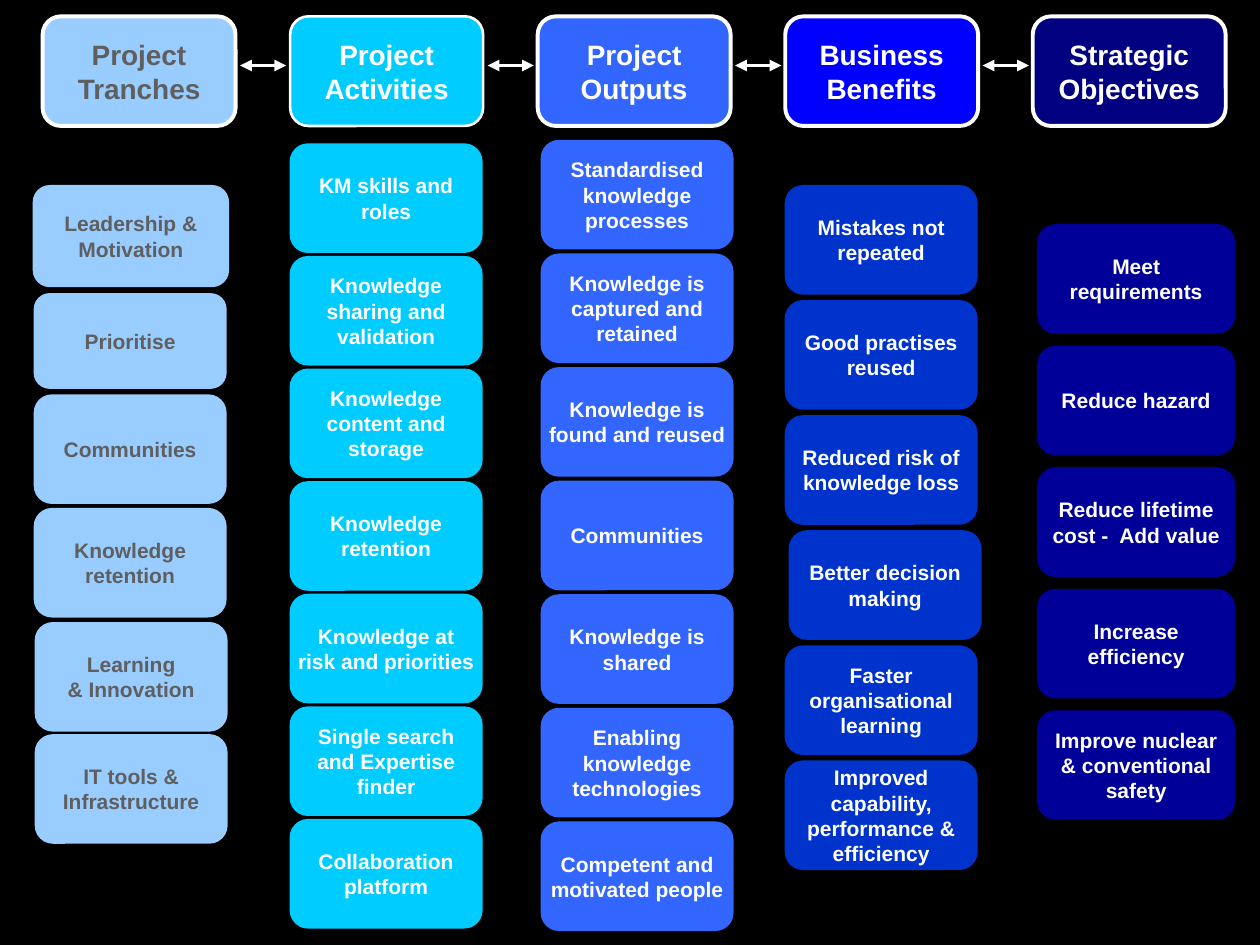
from lxml.etree import SubElement
from pptx import Presentation
from pptx.dml.color import RGBColor
from pptx.enum.shapes import MSO_CONNECTOR, MSO_SHAPE
from pptx.enum.text import MSO_ANCHOR, PP_ALIGN
from pptx.oxml.ns import qn
from pptx.util import Cm, Pt

HUES = {
    "black": "000000", "white": "FFFFFF", "grey": "5F5F5F",
    "pale": "99CCFF", "cyan": "00CCFF", "sky": "3366FF",
    "blue": "0000FF", "royal": "0033CC", "navy": "000080", "deep": "000099",
}
WIDE, HIGH = 3.89, 2.21
STEP = 4.99


def hue(name):
    return RGBColor.from_string(HUES[name])


def add_box(left, top, wide, high, fill, text, ink, size):
    box = slide.shapes.add_shape(
        MSO_SHAPE.ROUNDED_RECTANGLE, Cm(left), Cm(top), Cm(wide), Cm(high))
    box.shadow.inherit = False
    box.fill.solid()
    box.fill.fore_color.rgb = hue(fill)
    box.line.fill.background()
    frame = box.text_frame
    frame.text = text
    margins = {"margin_left": 0.05, "margin_right": 0.05,
               "margin_top": 0.03, "margin_bottom": 0.03}
    for name, gap in margins.items():
        setattr(frame, name, Cm(gap))
    frame.word_wrap = True
    frame.vertical_anchor = MSO_ANCHOR.MIDDLE
    style = {"name": "Arial", "size": Pt(size), "bold": True}
    for para in frame.paragraphs:
        para.alignment = PP_ALIGN.CENTER
        for name, value in style.items():
            setattr(para.font, name, value)
        para.font.color.rgb = hue(ink)
    return box


deck = Presentation()
deck.slide_width, deck.slide_height = Cm(25.4), Cm(19.05)
slide = deck.slides.add_slide(deck.slide_layouts[6])

ground = slide.shapes.add_shape(
    MSO_SHAPE.RECTANGLE, 0, 0, deck.slide_width, deck.slide_height)
ground.shadow.inherit = False
ground.fill.solid()
ground.fill.fore_color.rgb = hue("black")
ground.line.fill.background()

# Heading row: text, fill, ink, outline width
heads = [
    ("Project\nTranches", "pale", "grey", 2.25),
    ("Project\nActivities", "cyan", "white", 1.5),
    ("Project\nOutputs", "sky", "white", 2.25),
    ("Business\nBenefits", "blue", "white", 2.25),
    ("Strategic\nObjectives", "navy", "white", 2.25),
]
for col, (text, fill, ink, width) in enumerate(heads):
    head = add_box(0.86 + col * STEP, 0.33, WIDE, HIGH, fill, text, ink, 16)
    head.text_frame.word_wrap = False
    head.line.color.rgb = hue("white")
    head.line.width = Pt(width)

# Double arrows between the headings
for col in range(len(heads) - 1):
    start = 4.84 + col * STEP
    arrow = slide.shapes.add_connector(
        MSO_CONNECTOR.STRAIGHT, Cm(start), Cm(1.32), Cm(start + 0.93), Cm(1.32))
    arrow.line.color.rgb = hue("white")
    arrow.line.width = Pt(2.25)
    line = arrow.line._get_or_add_ln()
    for end in ("a:headEnd", "a:tailEnd"):
        SubElement(line, qn(end), type="triangle")
    SubElement(arrow._element.spPr, qn("a:effectLst"))

# Tranches vary in size: left, top, width, height, text
tranches = [
    (0.66, 3.73, 3.96, 2.06, "Leadership & Motivation"),
    (0.68, 5.91, WIDE, 1.93, "Prioritise"),
    (0.68, 7.95, WIDE, HIGH, "Communities"),
    (0.68, 10.24, WIDE, HIGH, "Knowledge retention"),
    (0.7, 12.54, WIDE, HIGH, "Learning\v& Innovation"),
    (0.7, 14.8, WIDE, HIGH, "IT tools & Infrastructure"),
]
for left, top, wide, high, text in tranches:
    add_box(left, top, wide, high, "pale", text, "grey", 12)

# Even columns: left, top, width, pitch, fill, texts
columns = [
    (5.84, 2.89, WIDE, 2.27, "cyan", [
        "KM skills and roles", "Knowledge sharing and validation",
        "Knowledge content and storage", "Knowledge retention",
        "Knowledge at risk and priorities",
        "Single search and Expertise finder", "Collaboration platform"]),
    (10.9, 2.82, WIDE, 2.29, "sky", [
        "Standardised knowledge processes",
        "Knowledge is captured and retained",
        "Knowledge is found and reused", "Communities",
        "Knowledge is shared", "Enabling knowledge technologies",
        "Competent and motivated people"]),
    (15.82, 3.73, WIDE, 2.32, "royal", [
        "Mistakes not repeated", "Good practises reused",
        "Reduced risk of knowledge loss", "Better decision making",
        "Faster organisational learning",
        "Improved capability, performance & efficiency"]),
    (20.91, 4.52, 3.99, 2.45, "deep", [
        "Meet requirements", "Reduce hazard",
        "Reduce lifetime cost -  Add value", "Increase efficiency",
        "Improve nuclear & conventional safety"]),
]
for left, top, wide, pitch, fill, texts in columns:
    for row, text in enumerate(texts):
        shift = 0.08 if text == "Better decision making" else 0
        add_box(left + shift, top + row * pitch, wide, HIGH,
                fill, text, "white", 12)

deck.save("out.pptx")
